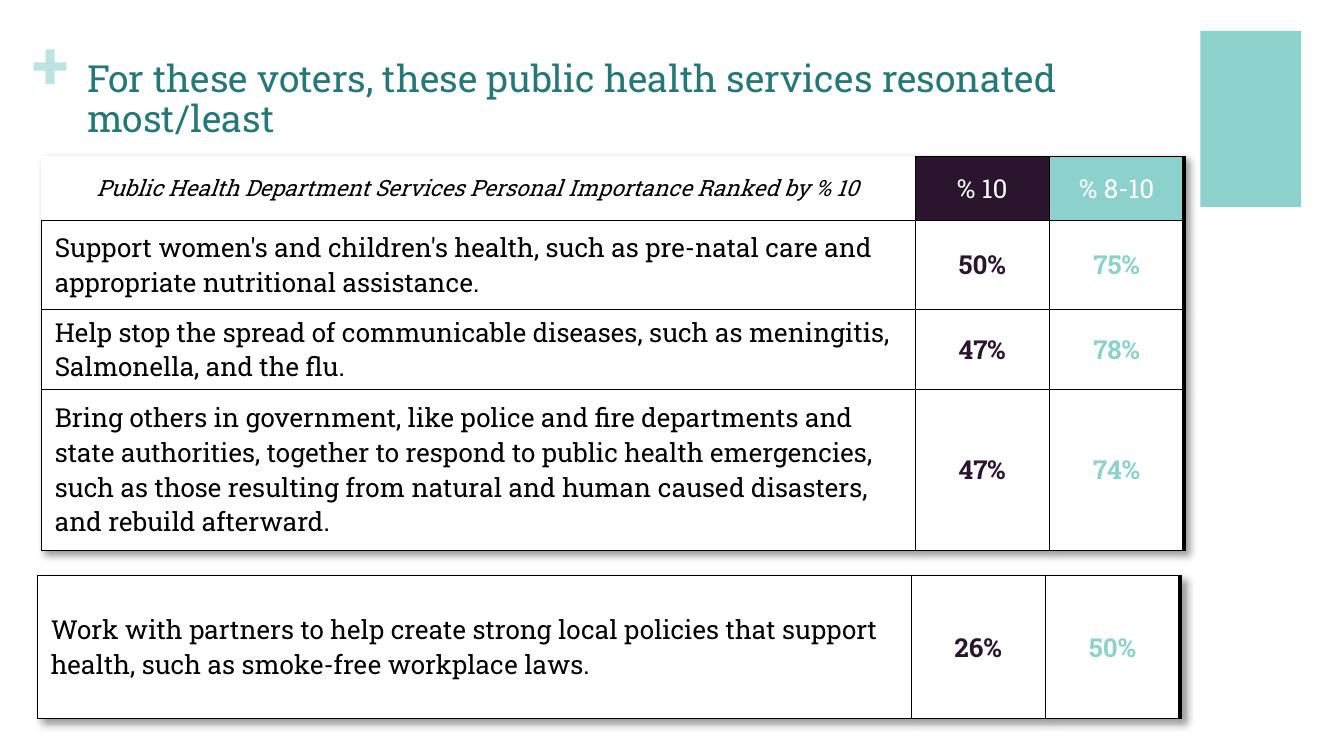
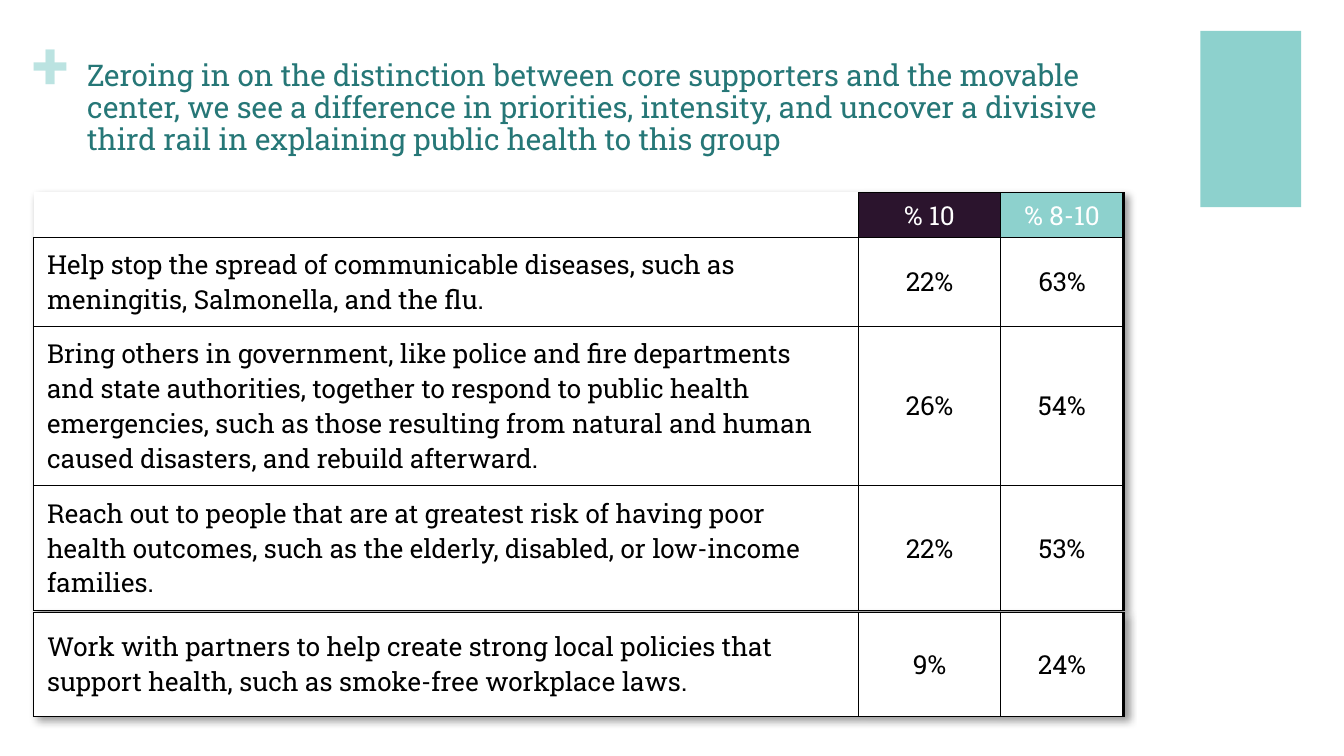
from lxml import etree
from pptx import Presentation
from pptx.dml.color import RGBColor
from pptx.enum.shapes import MSO_SHAPE
from pptx.enum.text import MSO_ANCHOR, PP_ALIGN
from pptx.oxml.ns import qn
from pptx.util import Pt

RECTANGLE = MSO_SHAPE.RECTANGLE
TOP, MIDDLE = MSO_ANCHOR.TOP, MSO_ANCHOR.MIDDLE
LEFT, CENTER = PP_ALIGN.LEFT, PP_ALIGN.CENTER
FONT = "Roboto Slab"
BLANK_LAYOUT = 6
COLORS = {
    "aqua": "8DD1CD",
    "pale_aqua": "BBE3E1",
    "teal": "267777",
    "plum": "2B142D",
    "black": "000000",
    "white": "FFFFFF",
}
THIN = 0.25
SIDE_INSET, TIGHT_INSET, ROOMY_INSET = 7.2, 3, 5

WOMEN = ("Support women's and children's health, such as pre-natal care and "
         "appropriate nutritional assistance.")
DISEASES = ("Help stop the spread of communicable diseases, such as meningitis, "
            "Salmonella, and the flu.")
EMERGENCIES = ("Bring others in government, like police and fire departments and "
               "state authorities, together to respond to public health "
               "emergencies, such as those resulting from natural and human "
               "caused disasters, and rebuild afterward.")
OUTREACH = ("Reach out to people that are at greatest risk of having poor health "
            "outcomes, such as the elderly, disabled, or low-income families.")
POLICIES = ("Work with partners to help create strong local policies that support "
            "health, such as smoke-free workplace laws.")


def color(name):
    return RGBColor.from_string(COLORS[name])


def set_attributes(target, values):
    for name, value in values.items():
        setattr(target, name, value)


def write_text(frame, text, size, color_name, align=LEFT, bold=False, italic=False):
    paragraph = frame.paragraphs[0]
    paragraph.alignment = align
    if not text:
        etree.SubElement(paragraph._p, qn("a:endParaRPr"), sz=str(size * 100))
        return paragraph
    run = paragraph.add_run()
    run.text = text
    set_attributes(run.font, {"name": FONT, "size": Pt(size), "bold": bold, "italic": italic})
    run.font.color.rgb = color(color_name)
    return paragraph


def add_text(slide, box, text, size, color_name, inset=(0, 0), bold=False):
    frame = slide.shapes.add_textbox(*map(Pt, box)).text_frame
    side, end = map(Pt, inset)
    set_attributes(frame, {
        "word_wrap": True, "vertical_anchor": TOP,
        "margin_left": side, "margin_right": side,
        "margin_top": end, "margin_bottom": end,
    })
    return write_text(frame, text, size, color_name, bold=bold)


def add_frame(slide, title, title_size):
    block = slide.shapes.add_shape(RECTANGLE, Pt(643), Pt(16.6), Pt(54), Pt(94.4))
    block.shadow.inherit = False
    block.fill.solid()
    block.fill.fore_color.rgb = color("aqua")
    block.line.fill.background()
    add_text(slide, (17.3, 12, 21, 44), "+", 36, "pale_aqua", bold=True)
    paragraph = add_text(slide, (39.6, 28.8, 594.7, 66.2), title, title_size,
                         "teal", inset=(7.2, 3.6))
    paragraph.line_spacing = 0.9


def set_borders(cell, widths):
    properties = cell._tc.get_or_add_tcPr()
    for index, (side, width) in enumerate(zip("LRTB", widths)):
        line = etree.Element(qn(f"a:ln{side}"), w=str(Pt(width)))
        if width:
            fill = etree.SubElement(line, qn("a:solidFill"))
            etree.SubElement(fill, qn("a:srgbClr"), val=COLORS["black"])
        else:
            etree.SubElement(line, qn("a:noFill"))
        properties.insert(index, line)


def add_table_shadow(table):
    effects = etree.SubElement(table._tbl.tblPr, qn("a:effectLst"))
    table._tbl.tblPr.insert(0, effects)
    shadow = etree.SubElement(effects, qn("a:outerShdw"), blurRad=str(Pt(4)),
                              dist=str(Pt(3)), dir="2700000", algn="tl")
    shade = etree.SubElement(shadow, qn("a:srgbClr"), val=COLORS["black"])
    etree.SubElement(shade, qn("a:alpha"), val="40000")


def format_cell(cell, text, borders, fill="white", side=SIDE_INSET, end=TIGHT_INSET,
                size=14, color_name="black", **text_format):
    set_attributes(cell, {
        "vertical_anchor": MIDDLE,
        "margin_left": Pt(side), "margin_right": Pt(side),
        "margin_top": Pt(end), "margin_bottom": Pt(end),
    })
    cell.fill.solid()
    cell.fill.fore_color.rgb = color(fill)
    set_borders(cell, borders)
    write_text(cell.text_frame, text, size, color_name, **text_format)


def add_services_table(slide, position, widths, heights, services, edge,
                       heading=None, highlight=False):
    has_header = heading is not None
    graphic = slide.shapes.add_table(len(heights), len(widths), *map(Pt, position),
                                     Pt(sum(widths)), Pt(sum(heights)))
    table = graphic.table
    set_attributes(table, {"first_row": False, "horz_banding": False})
    add_table_shadow(table)
    for column, width in zip(table.columns, widths):
        column.width = Pt(width)
    for row, height in zip(table.rows, heights):
        row.height = Pt(height)

    inner = (THIN, THIN, THIN, THIN)
    last = (THIN, edge, THIN, THIN)
    if has_header:
        format_cell(table.cell(0, 0), heading, (0, THIN, 0, THIN), side=0,
                    size=12, align=CENTER, italic=True)
        labels = (("% 10", "plum", inner), ("% 8-10", "aqua", last))
        for column, (label, fill, borders) in enumerate(labels, 1):
            format_cell(table.cell(0, column), label, borders, fill=fill,
                        color_name="white", align=CENTER)

    value_colors = ("plum", "aqua") if highlight else ("black", "black")
    for row, (service, *values) in enumerate(services, int(has_header)):
        tight = highlight and service in (DISEASES, EMERGENCIES)
        format_cell(table.cell(row, 0), service, inner,
                    end=TIGHT_INSET if tight else ROOMY_INSET)
        columns = zip(values, value_colors, (inner, last))
        for column, (value, color_name, borders) in enumerate(columns, 1):
            format_cell(table.cell(row, column), f"{value}%", borders,
                        color_name=color_name, align=CENTER, bold=highlight)


def add_voters_slide(presentation):
    slide = presentation.slides.add_slide(presentation.slide_layouts[BLANK_LAYOUT])
    add_frame(slide, "For these voters, these public health services resonated most/least", 20)
    shared = {"widths": (468, 72, 72), "edge": 2.25, "highlight": True}
    add_services_table(
        slide, (22.2, 83.6), heights=(34.3, 47.7, 42.9, 86.3),
        services=((WOMEN, 50, 75), (DISEASES, 47, 78), (EMERGENCIES, 47, 74)),
        heading="Public Health Department Services Personal Importance Ranked by % 10",
        **shared)
    add_services_table(slide, (20, 308), heights=(77,),
                       services=((POLICIES, 26, 50),), **shared)


def add_center_slide(presentation):
    slide = presentation.slides.add_slide(presentation.slide_layouts[BLANK_LAYOUT])
    add_frame(slide, "Zeroing in on the distinction between core supporters and the "
              "movable center, we see a difference in priorities, intensity, and "
              "uncover a divisive third rail in explaining public health to this group", 16)
    shared = {"widths": (442, 76, 66), "edge": 1.5}
    add_services_table(
        slide, (18, 103), heights=(24.1, 47.7, 85.2, 67),
        services=((DISEASES, 22, 63), (EMERGENCIES, 26, 54), (OUTREACH, 22, 53)),
        heading="", **shared)
    add_services_table(slide, (18, 328), heights=(55.5,),
                       services=((POLICIES, 9, 24),), **shared)


def main():
    presentation = Presentation()
    set_attributes(presentation, {"slide_width": Pt(720), "slide_height": Pt(405)})
    add_voters_slide(presentation)
    add_center_slide(presentation)
    presentation.save("out.pptx")


if __name__ == "__main__":
    main()
